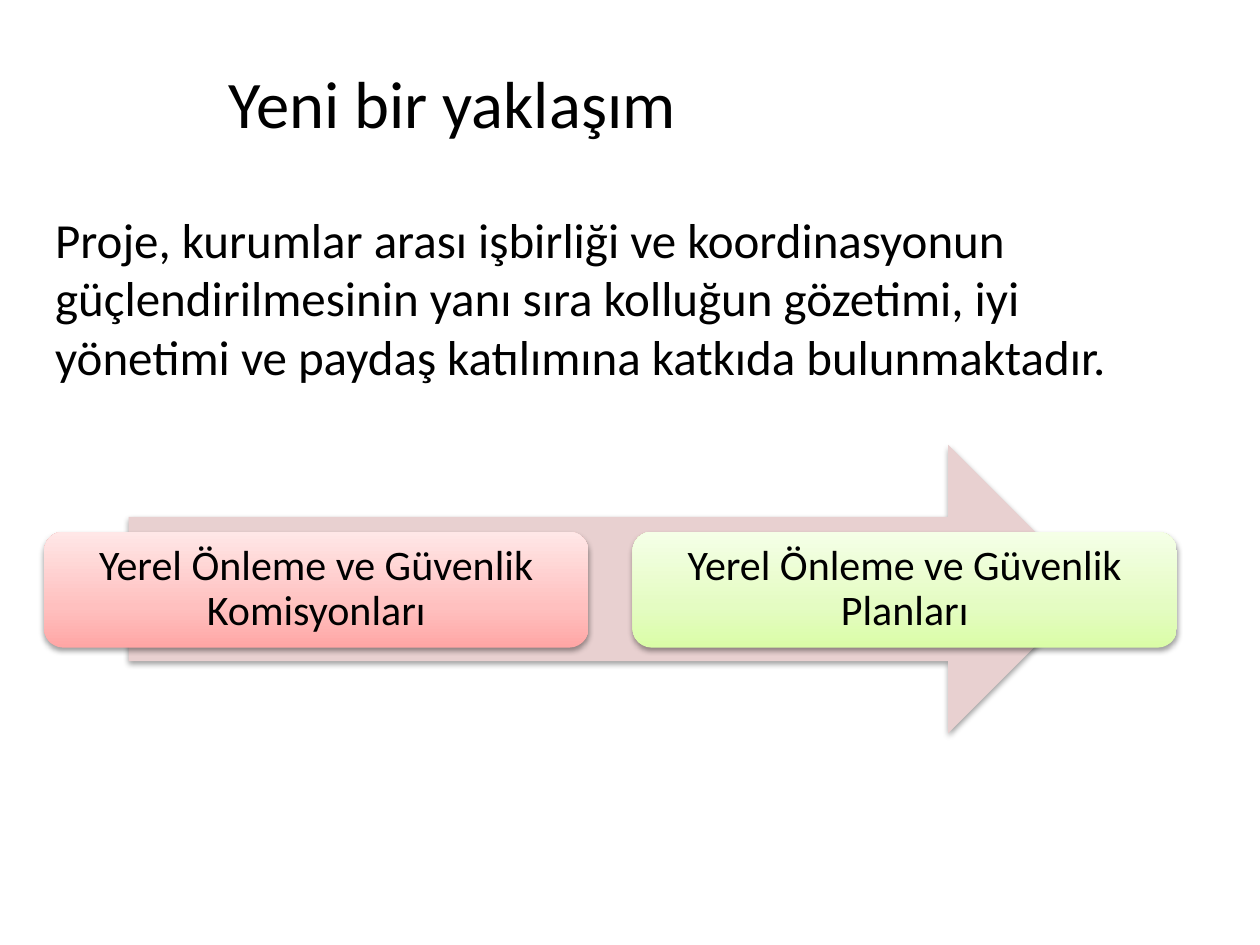
from lxml import etree
from pptx import Presentation
from pptx.dml.color import RGBColor
from pptx.enum.shapes import MSO_SHAPE
from pptx.enum.text import MSO_ANCHOR, PP_ALIGN
from pptx.oxml.ns import qn
from pptx.util import Inches, Pt

ARROW, ROUNDED = MSO_SHAPE.RIGHT_ARROW, MSO_SHAPE.ROUNDED_RECTANGLE
MIDDLE, TOP = MSO_ANCHOR.MIDDLE, MSO_ANCHOR.TOP
CENTER, LEFT = PP_ALIGN.CENTER, PP_ALIGN.LEFT

FONT = "Calibri"
COLORS = {
    "text": "000000",
    "shadow": "000000",
    "arrow": "E8D0D0",
    "red": ("FFA6A5", "FFC0BF", "FFE7E7"),
    "green": ("DAFDA7", "E4FCC2", "F5FFE7"),
}
GRADIENT_STOPS = (0, 35, 100)
SHADOW = {"blurRad": Pt(3.1), "dist": Pt(1.6), "dir": 90 * 60000,
          "algn": "ctr", "rotWithShape": 0}

# Equal boxes in a row over the arrow
BOX_LEFT, BOX_TOP, BOX_WIDTH, BOX_HEIGHT, BOX_GAP = 0.35, 4.22, 4.32, 0.92, 0.35
BOXES = (
    ("Yerel Önleme ve Güvenlik Komisyonları", "red"),
    ("Yerel Önleme ve Güvenlik Planları", "green"),
)


def add_xml(parent, tag, **attributes):
    values = {key: str(value) for key, value in attributes.items()}
    return etree.SubElement(parent, qn(tag), values)


def add_color(parent, color, **modifiers):
    node = add_xml(parent, "a:srgbClr", val=color)
    for name, percent in modifiers.items():
        add_xml(node, f"a:{name}", val=percent * 1000)


def write_text(shape, text, size, align, anchor, paragraph_format=None):
    frame = shape.text_frame
    frame.word_wrap = True
    frame.vertical_anchor = anchor
    paragraph = frame.paragraphs[0]
    paragraph.text = text
    paragraph.alignment = align
    for name, value in (paragraph_format or {}).items():
        setattr(paragraph, name, value)
    for name, value in {"name": FONT, "size": Pt(size)}.items():
        setattr(paragraph.font, name, value)
    paragraph.font.color.rgb = RGBColor.from_string(COLORS["text"])


def add_shadowed_shape(slide, preset, *bounds):
    shape = slide.shapes.add_shape(preset, *map(Inches, bounds))
    shape.line.fill.background()
    shape.shadow.inherit = False
    effects = shape.element.spPr.find(qn("a:effectLst"))
    add_color(add_xml(effects, "a:outerShdw", **SHADOW), COLORS["shadow"], alpha=38)
    return shape


def fill_gradient(shape, colors):
    shape.fill.gradient()
    shape.fill.gradient_angle = 90
    stops = shape.element.spPr.find(qn("a:gradFill")).find(qn("a:gsLst"))
    for stop in list(stops):
        stops.remove(stop)
    for position, color in zip(GRADIENT_STOPS, colors):
        add_color(add_xml(stops, "a:gs", pos=position * 1000), color)


def add_title(slide, text):
    title = slide.shapes.title
    bounds = {"left": 0.34, "top": 0.18, "width": 6.5, "height": 1.25}
    for name, value in bounds.items():
        setattr(title, name, Inches(value))
    write_text(title, text, 38, CENTER, MIDDLE)


def add_body(slide, text):
    body = slide.shapes.add_textbox(*map(Inches, (0.34, 1.61, 9, 1.65)))
    write_text(body, text, 28, LEFT, TOP, {"space_after": Pt(12)})


def add_arrow(slide):
    arrow = add_shadowed_shape(slide, ARROW, 1.02, 3.53, 7.65, 2.29)
    arrow.fill.solid()
    arrow.fill.fore_color.rgb = RGBColor.from_string(COLORS["arrow"])


def add_box(slide, index, text, color):
    left = BOX_LEFT + index * (BOX_WIDTH + BOX_GAP)
    box = add_shadowed_shape(slide, ROUNDED, left, BOX_TOP, BOX_WIDTH, BOX_HEIGHT)
    fill_gradient(box, COLORS[color])
    for side in ("left", "top", "right", "bottom"):
        setattr(box.text_frame, f"margin_{side}", Inches(0.1))
    write_text(box, text, 24, CENTER, MIDDLE, {"line_spacing": 0.9})


def main():
    presentation = Presentation()
    presentation.slide_width, presentation.slide_height = Inches(10), Inches(7.5)
    slide = presentation.slides.add_slide(presentation.slide_layouts[5])

    # Heading and statement
    add_title(slide, "Yeni bir yaklaşım")
    add_body(slide, "Proje, kurumlar arası işbirliği ve koordinasyonun "
                    "güçlendirilmesinin yanı sıra kolluğun gözetimi, iyi "
                    "yönetimi ve paydaş katılımına katkıda bulunmaktadır.")

    # Process arrow with its two steps
    add_arrow(slide)
    for index, (text, color) in enumerate(BOXES):
        add_box(slide, index, text, color)

    presentation.save("out.pptx")


if __name__ == "__main__":
    main()
